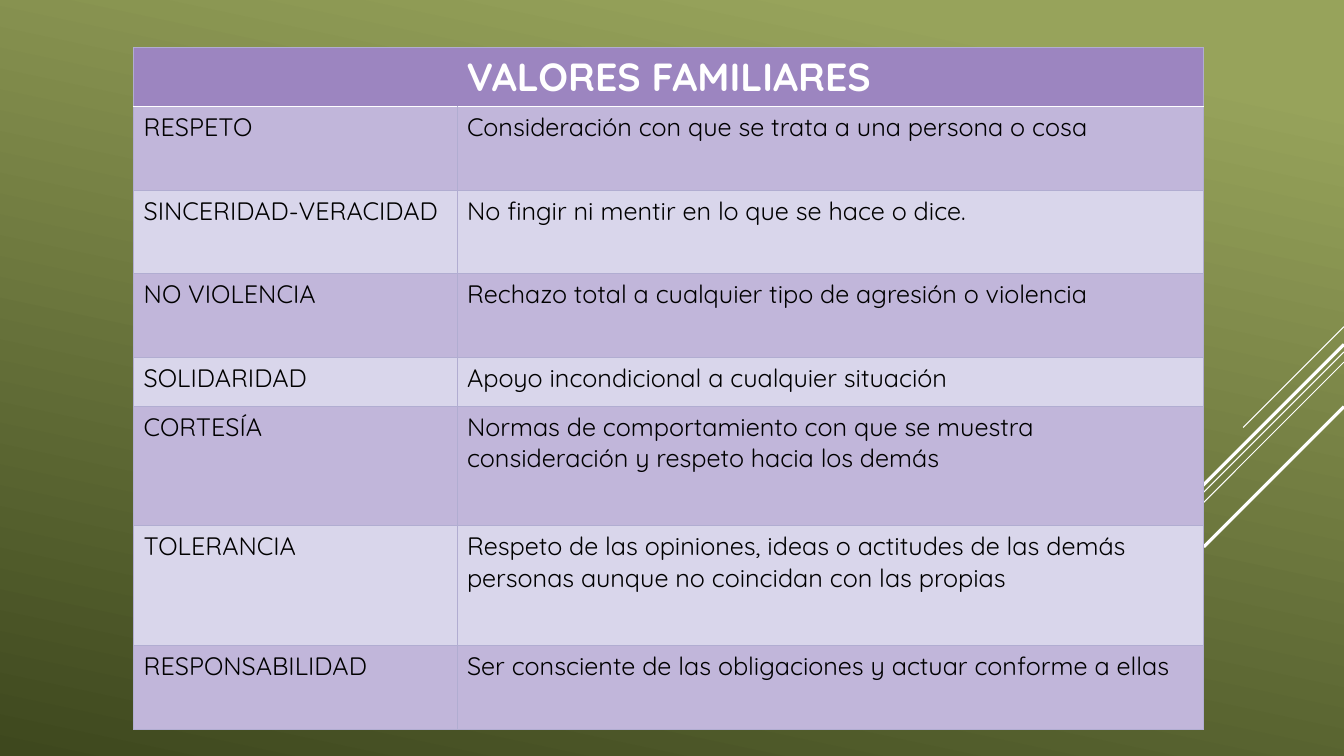
import pptx
import pptx.util
import pptx.dml.color
import pptx.enum.shapes
import pptx.enum.text
import pptx.oxml
import pptx.oxml.ns

RGB = pptx.dml.color.RGBColor
WHITE = RGB(0xFF, 0xFF, 0xFF)
BLACK = RGB(0x00, 0x00, 0x00)
OLIVE_LIGHT = RGB(0x97, 0xA3, 0x5B)
OLIVE_DARK = RGB(0x3E, 0x48, 0x1E)
PURPLE = RGB(0x9C, 0x85, 0xC0)
LILAC = RGB(0xC1, 0xB6, 0xDA)
LAVENDER = RGB(0xD9, 0xD6, 0xEB)
BORDER = RGB(0xB1, 0xAD, 0xD1)

COLUMNS, ROWS = 160, 90  # square grid units over the slide

TITLE = "VALORES FAMILIARES"
VALUES = [  # value, meaning, row height
    ("RESPETO", "Consideración con que se trata a una persona o cosa", 9.96),
    ("SINCERIDAD-VERACIDAD", "No fingir ni mentir en lo que se hace o dice.", 9.96),
    ("NO VIOLENCIA", "Rechazo total a cualquier tipo de agresión o violencia", 9.96),
    ("SOLIDARIDAD", "Apoyo incondicional a cualquier situación", 5.8),
    ("CORTESÍA", "Normas de comportamiento con que se muestra "
     "consideración y respeto hacia los demás", 14.25),
    ("TOLERANCIA", "Respeto de las opiniones, ideas o actitudes de las demás "
     "personas aunque no coincidan con las propias", 14.25),
    ("RESPONSABILIDAD", "Ser consciente de las obligaciones y actuar conforme a ellas", 9.96),
]
# Diagonals from the right edge: start row, run to the lower left, weight
DIAGONALS = [(38.9, 12, 0.75), (41.9, 39.1, 0.75), (43.1, 24.9, 0.75),
             (41, 22.9, 2.25), (48.4, 16.7, 2.25)]


class Slide:
    font = "Quicksand"

    def __init__(self, deck):
        self.page = deck.slides.add_slide(deck.slide_layouts[6])
        self.column = deck.slide_width / COLUMNS
        self.row = deck.slide_height / ROWS

    def x(self, columns):
        return pptx.util.Emu(round(columns * self.column))

    def y(self, rows):
        return pptx.util.Emu(round(rows * self.row))

    def background(self, start, end, angle):
        fill = self.page.background.fill
        fill.gradient()
        fill.gradient_angle = angle
        for stop, color, position in zip(fill.gradient_stops, (start, end), (0.1, 1)):
            stop.color.rgb = color
            stop.position = position

    def diagonals(self, lines):
        group = self.page.shapes.add_group_shape()
        for top, run, weight in lines:
            line = group.shapes.add_connector(
                pptx.enum.shapes.MSO_CONNECTOR.STRAIGHT,
                self.x(COLUMNS), self.y(top), self.x(COLUMNS - run), self.y(top + run))
            line.line.color.rgb = WHITE
            line.line.width = pptx.util.Pt(weight)
            line._element.spPr.append(pptx.oxml.parse_xml(
                f'<a:effectLst {pptx.oxml.ns.nsdecls("a")}/>'))

    def table(self, left, top, widths, heights):
        table = self.page.shapes.add_table(
            len(heights), len(widths), self.x(left), self.y(top),
            self.x(sum(widths)), self.y(sum(heights))).table
        table.first_row = table.horz_banding = False
        for column, width in zip(table.columns, widths):
            column.width = self.x(width)
        for row, height in zip(table.rows, heights):
            row.height = self.y(height)
        return table

    def borders(self, cell, white_side=None):
        for side in "LRTB":
            color, weight, alpha = (WHITE, 1.25, 100) if side == white_side else (BORDER, 0.75, 60)
            cell._tc.get_or_add_tcPr().append(pptx.oxml.parse_xml(
                f'<a:ln{side} {pptx.oxml.ns.nsdecls("a")} w="{pptx.util.Pt(weight)}">'
                f'<a:solidFill><a:srgbClr val="{color}"><a:alpha val="{alpha * 1000}"/>'
                f'</a:srgbClr></a:solidFill><a:prstDash val="solid"/></a:ln{side}>'))

    def cell(self, cell, fill, white_side=None):
        self.borders(cell, white_side)
        cell.fill.solid()
        cell.fill.fore_color.rgb = fill

    def text(self, cell, words, size, color, bold=False):
        para = cell.text_frame.paragraphs[0]
        span = para.add_run()
        span.text = words
        span.font.name = self.font
        span.font.size = pptx.util.Pt(size)
        span.font.bold = bold
        span.font.color.rgb = color
        return para


def main():
    deck = pptx.Presentation()
    deck.slide_width = pptx.util.Inches(13.33)
    deck.slide_height = pptx.util.Inches(7.5)
    slide = Slide(deck)

    # Backdrop
    slide.background(OLIVE_LIGHT, OLIVE_DARK, 258)
    slide.diagonals(DIAGONALS)

    # Table heading
    heights = [7] + [height for _, _, height in VALUES]
    table = slide.table(15.9, 5.64, (38.5, 88.9), heights)
    for cell in table.rows[0].cells:
        slide.cell(cell, PURPLE, "B")
    heading = table.cell(0, 0)
    heading.merge(table.cell(0, 1))
    para = slide.text(heading, TITLE, 28, WHITE, True)
    para.alignment = pptx.enum.text.PP_ALIGN.CENTER

    # Values and their meanings
    for index, (value, meaning, _) in enumerate(VALUES, 1):
        for cell, words in zip(table.rows[index].cells, (value, meaning)):
            slide.cell(cell, LILAC if index % 2 else LAVENDER, "T" if index == 1 else None)
            slide.text(cell, words, 18, BLACK)

    deck.save("out.pptx")


if __name__ == "__main__":
    main()
